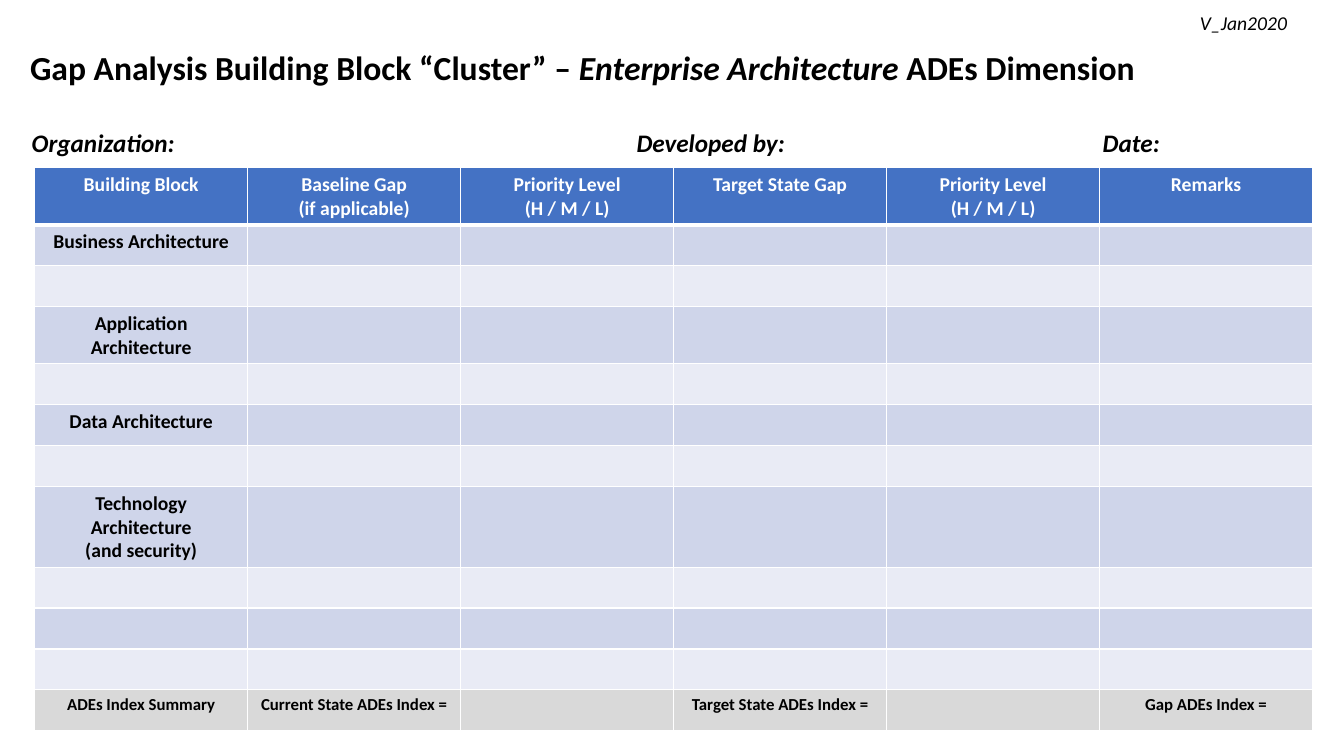
"""Build the gap analysis slide for the Enterprise Architecture dimension."""
from dataclasses import dataclass

from lxml.etree import SubElement
from pptx import Presentation
from pptx.dml.color import RGBColor
from pptx.enum.text import MSO_AUTO_SIZE, PP_ALIGN as Align
from pptx.oxml.ns import qn
from pptx.util import Pt


@dataclass(frozen=True)
class Theme:
    font: str = "Calibri"
    black: str = "000000"
    white: str = "FFFFFF"
    header: str = "4472C4"
    band_dark: str = "CFD5EA"
    band_light: str = "E9EBF5"
    summary: str = "D9D9D9"
    title_size: int = 24
    label_size: int = 18
    body_size: int = 14
    summary_size: int = 12


THEME = Theme()
COLUMN_COUNT = 6
COLUMN_WIDTH = 152.16
ROW_HEIGHT = 29.2
HEADERS = [
    "Building Block",
    "Baseline Gap\n(if applicable)",
    "Priority Level\n(H / M / L)",
    "Target State Gap",
    "Priority Level\n(H / M / L)",
    "Remarks",
]
BUILDING_BLOCKS = [
    "Business Architecture", "",
    "Application Architecture", "",
    "Data Architecture", "",
    "Technology Architecture\n(and security)", "",
    "", "",
]
SUMMARY = [
    "ADEs Index Summary",
    "Current State ADEs Index =",
    "",
    "Target State ADEs Index =",
    "",
    "Gap ADEs Index =",
]


def add_text(paragraph, text, size, color=THEME.black, bold=False, italic=False):
    run = paragraph.add_run()
    run.text = text
    font = run.font
    font.name, font.size = THEME.font, Pt(size)
    font.bold, font.italic = bold, italic
    font.color.rgb = RGBColor.from_string(color)


def add_text_box(slide, left, top, width, height):
    shape = slide.shapes.add_textbox(Pt(left), Pt(top), Pt(width), Pt(height))
    shape.text_frame.word_wrap = False
    shape.text_frame.auto_size = MSO_AUTO_SIZE.SHAPE_TO_FIT_TEXT
    return shape.text_frame.paragraphs[0]


def add_tab_stops(paragraph, positions):
    tab_list = SubElement(paragraph._p.get_or_add_pPr(), qn("a:tabLst"))
    for position in positions:
        SubElement(tab_list, qn("a:tab"), pos=str(Pt(position)), algn="l")


def set_borders(cell, top, bottom):
    properties = cell._tc.get_or_add_tcPr()
    for side, width in (("L", 1), ("R", 1), ("T", top), ("B", bottom)):
        line = SubElement(properties, qn(f"a:ln{side}"), w=str(Pt(width)))
        fill = SubElement(line, qn("a:solidFill"))
        SubElement(fill, qn("a:srgbClr"), val=THEME.white)


def fill_row(row, texts, fill, size=THEME.body_size, color=THEME.black, top=1, bottom=1):
    for cell, text in zip(row.cells, texts):
        set_borders(cell, top, bottom)
        cell.fill.solid()
        cell.fill.fore_color.rgb = RGBColor.from_string(fill)
        if not text:
            continue
        for index, line in enumerate(text.split("\n")):
            frame = cell.text_frame
            paragraph = frame.add_paragraph() if index else frame.paragraphs[0]
            paragraph.alignment = Align.CENTER
            add_text(paragraph, line, size, color, bold=True)


def add_gap_table(slide):
    row_count = len(BUILDING_BLOCKS) + 2
    table = slide.shapes.add_table(
        row_count, COLUMN_COUNT, Pt(24.8), Pt(119.8),
        Pt(COLUMN_WIDTH * COLUMN_COUNT), Pt(ROW_HEIGHT * row_count),
    ).table
    for column in table.columns:
        column.width = Pt(COLUMN_WIDTH)
    header, *blocks, summary = table.rows
    for row in table.rows:
        row.height = Pt(ROW_HEIGHT)
    fill_row(header, HEADERS, THEME.header, color=THEME.white, bottom=3)
    for index, (row, name) in enumerate(zip(blocks, BUILDING_BLOCKS)):
        band = THEME.band_light if index % 2 else THEME.band_dark
        texts = [name] + [""] * (COLUMN_COUNT - 1)
        fill_row(row, texts, band, top=1 if index else 3)
    fill_row(summary, SUMMARY, THEME.summary, size=THEME.summary_size)


def main():
    presentation = Presentation()
    presentation.slide_width, presentation.slide_height = Pt(960), Pt(540)
    slide = presentation.slides.add_slide(presentation.slide_layouts[6])

    title = add_text_box(slide, 14.4, 29.8, 804, 36)
    add_text(title, "Gap Analysis Building Block “Cluster” – ", THEME.title_size, bold=True)
    add_text(title, "Enterprise Architecture ", THEME.title_size, bold=True, italic=True)
    add_text(title, "ADEs Dimension", THEME.title_size, bold=True)

    add_gap_table(slide)

    labels = add_text_box(slide, 15.6, 87.4, 916, 29)
    add_tab_stops(labels, (432, 765))
    add_text(labels, "Organization:\tDeveloped by:\tDate:", THEME.label_size, bold=True, italic=True)

    version = add_text_box(slide, 850, 4.6, 78, 24.2)
    add_text(version, "V_Jan2020", THEME.body_size, italic=True)

    presentation.save("out.pptx")


if __name__ == "__main__":
    main()
